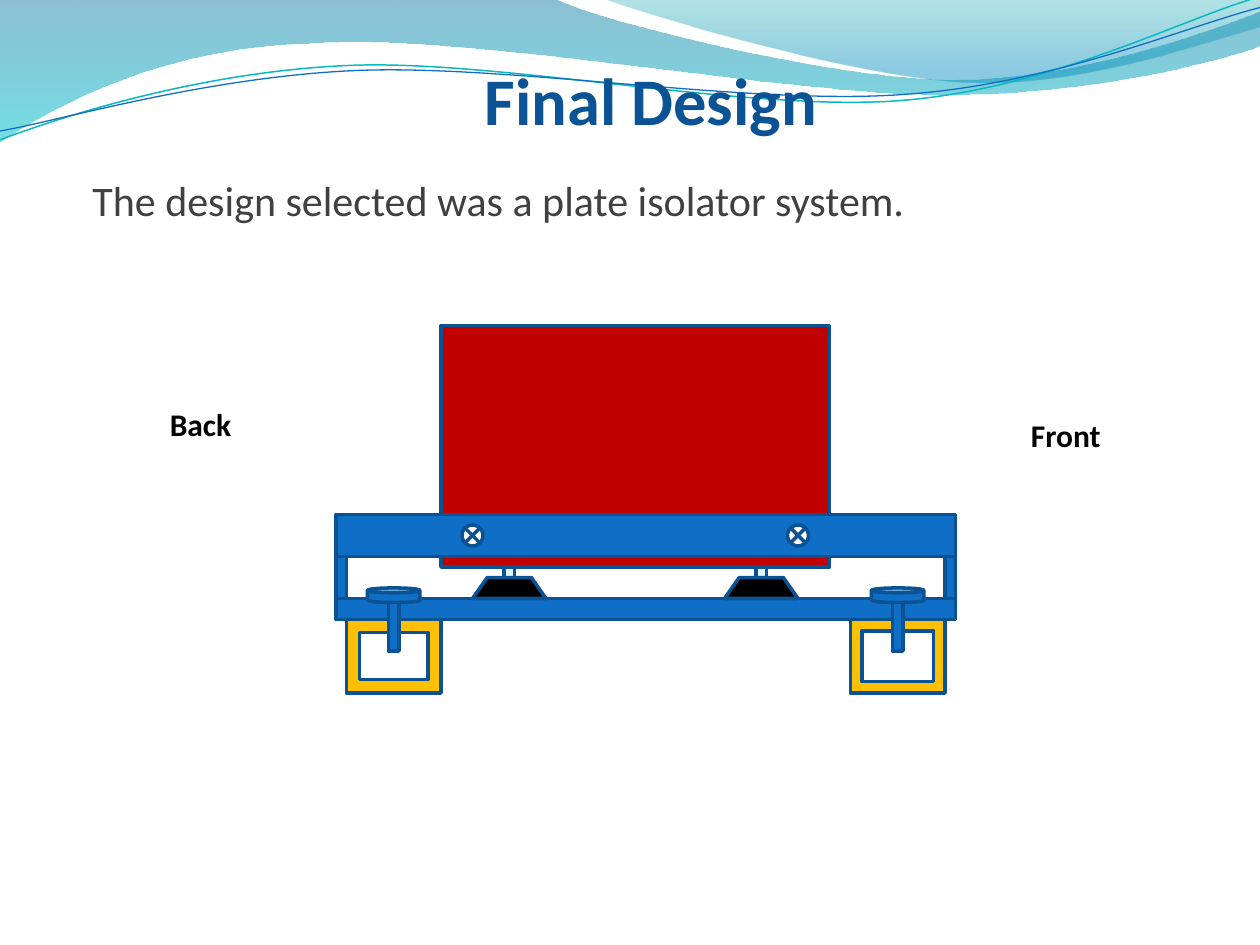
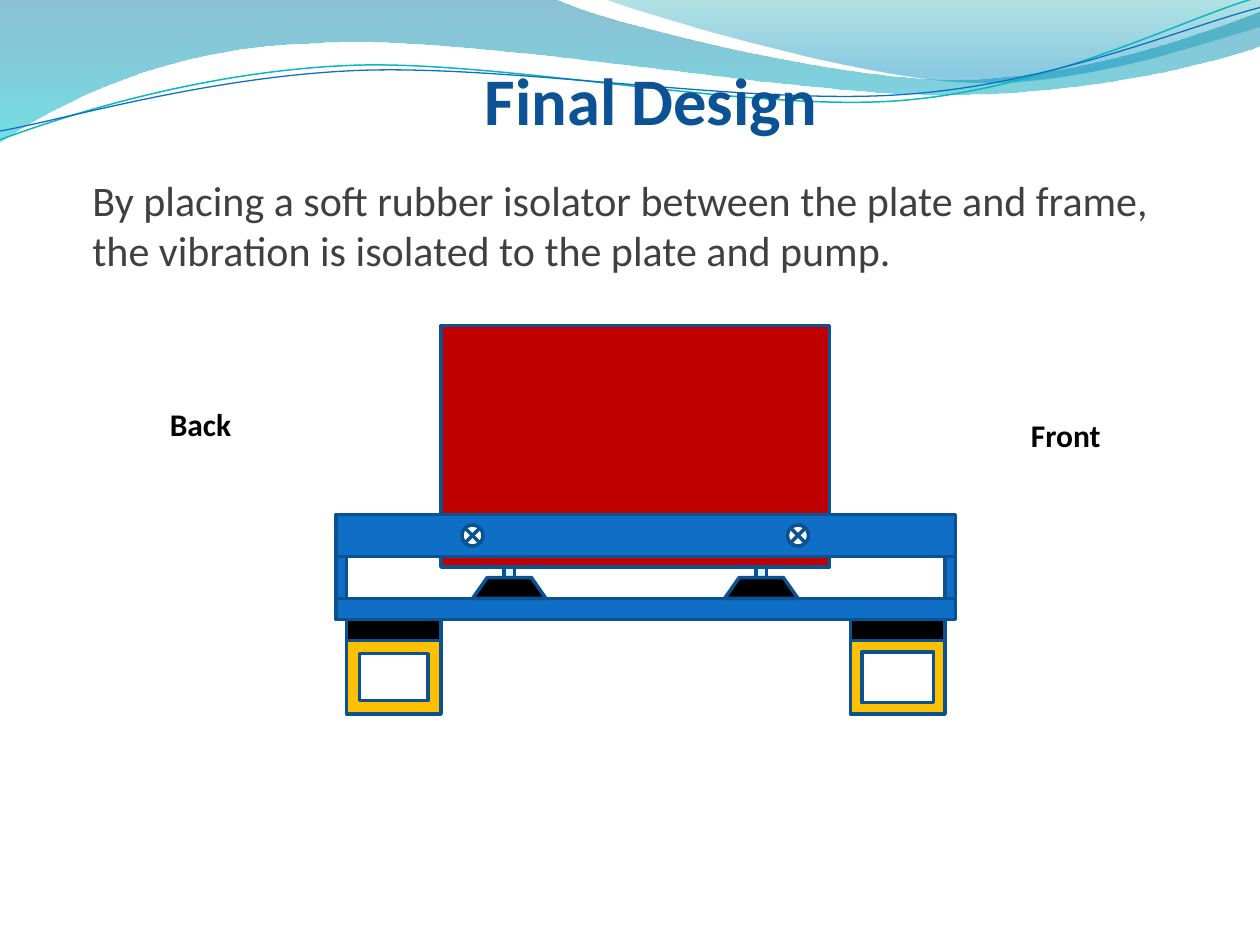
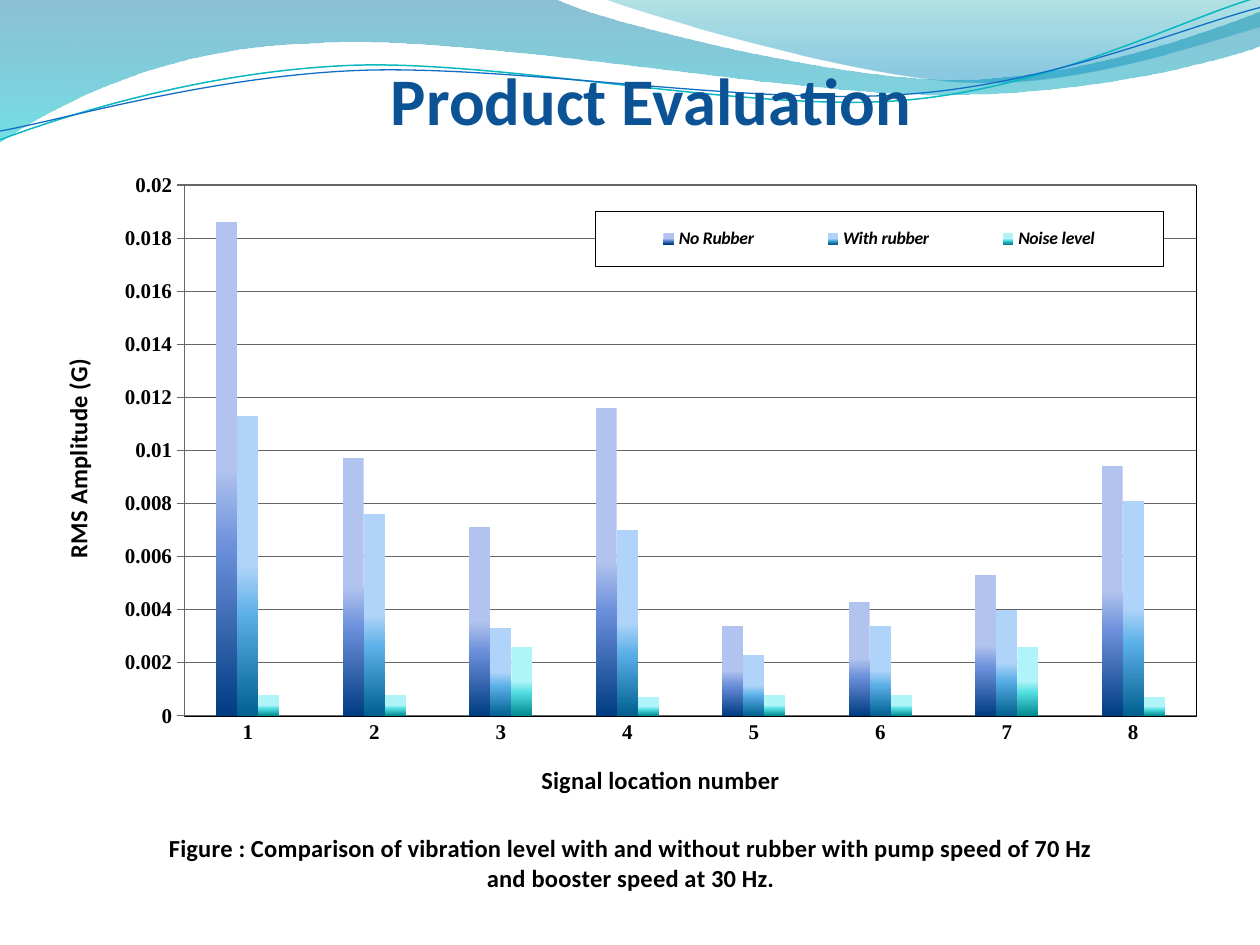
import pptx
import pptx.chart.data
import pptx.dml.color
import pptx.enum.chart
import pptx.enum.shapes
import pptx.enum.text
import pptx.oxml
import pptx.oxml.ns
import pptx.util

WIDE, HIGH = 10, 7.5
CELL = 1 / 12  # inches in one grid cell
FONT, TICK = "Calibri", "Times New Roman"
HUES = {
    "title": "0B5394", "body": "404040", "ink": "000000", "white": "FFFFFF",
    "edge": "0B5292", "steel": "0F6FC6", "stud": "DBF5F9", "pump": "C00000",
    "frame": "FFC000", "teal": "0AB8BF", "grid": "666666",
}
WAVES = [  # start, legs (one point is straight, three a curve), gradient stops
    ((0, 0), [
        [(4.4, -0.01)],
        [(4.76, 0.17), (6.64, 0.63), (7.58, 0.63)],
        [(8.53, 0.63), (9.58, 0.26), (10, 0.09)],
        [(10.01, 0.36)],
        [(9.83, 0.44), (8.7, 0.76), (7.46, 0.75)],
        [(6.22, 0.75), (3.82, 0.28), (2.57, 0.34)],
        [(1.29, 0.36), (0.46, 0.83), (-0.01, 1.13)],
    ], [(0, "0074A1", 45), (100, "00C6CF", 55)]),
    ((4.79, -0.01), [
        [(5.09, 0.11), (6.82, 0.62), (7.69, 0.65)],
        [(8.56, 0.69), (9.61, 0.32), (10, 0.21)],
        [(10, 0)],
    ], [(0, "00A1A9", 30), (80, "008BBF", 45)]),
]
LINES = [  # start, legs, colour, width
    ((0, 1.11), [
        [(0.48, 0.93), (1.58, 0.57), (2.77, 0.52)],
        [(3.95, 0.47), (5.93, 0.89), (7.13, 0.8)],
        [(8.33, 0.71), (9.38, 0.15), (9.98, -0.02)],
    ], "teal", 0.85),
    ((0, 1.04), [
        [(0.47, 0.96), (1.64, 0.61), (2.83, 0.56)],
        [(4.03, 0.51), (5.97, 0.84), (7.17, 0.75)],
        [(8.36, 0.67), (9.41, 0.21), (10, 0.06)],
    ], "steel", 0.75),
]
SERIES = [  # name, values, gradient from light to dark
    ("No Rubber", [0.0186, 0.0097, 0.0071, 0.0116, 0.0034, 0.0043, 0.0053, 0.0094],
     ["B1C3EE", "6B8FDA", "003C82"]),
    ("With rubber", [0.0113, 0.0076, 0.0033, 0.007, 0.0023, 0.0034, 0.004, 0.0081],
     ["B0D4F9", "5CB0E8", "006090"]),
    ("Noise level", [0.0008, 0.0008, 0.0026, 0.0007, 0.0008, 0.0008, 0.0026, 0.0007],
     ["AFF4F9", "54DEE2", "008A90"]),
]
KIND = pptx.enum.shapes.MSO_SHAPE
qn = pptx.oxml.ns.qn


def rgb(name):
    return pptx.dml.color.RGBColor.from_string(HUES[name])


def cells(*nums):
    return [pptx.util.Inches(n * CELL) for n in nums]


def style(font, size, hue="ink", bold=True, face=FONT, italic=False):
    font.size, font.bold, font.italic, font.name = pptx.util.Pt(size), bold, italic, face
    font.color.rgb = rgb(hue)


def text(slide, words, box, size, hue="ink", bold=True, align="LEFT", inset=0.1):
    """Write words in a box given in grid cells."""
    frame = slide.shapes.add_textbox(*cells(*box)).text_frame
    frame.word_wrap = True
    frame.margin_left = pptx.util.Inches(inset)
    para = frame.paragraphs[0]
    para.alignment = getattr(pptx.enum.text.PP_ALIGN, align)
    run = para.add_run()
    run.text = words
    style(run.font, size, hue, bold)


def blend(fill, root, stops):
    """Fill from top to bottom through (position, colour, alpha) stops."""
    fill.gradient()
    fill.gradient_angle = 270
    holder = next(root.iter(qn("a:gsLst")))
    for old in list(holder):
        holder.remove(old)
    for pos, hue, alpha in stops:
        holder.append(pptx.oxml.parse_xml(
            f'<a:gs {pptx.oxml.ns.nsdecls("a")} pos="{pos * 1000}"><a:srgbClr val="{hue}">'
            f'<a:alpha val="{alpha * 1000}"/></a:srgbClr></a:gs>'))


def curve(slide, start, legs, close):
    """Outline all points, then join each leg of three into one cubic curve."""
    def emu(point):
        return tuple(pptx.util.Inches(n) for n in point)

    pen = slide.shapes.build_freeform(*emu(start))
    pen.add_line_segments([emu(point) for leg in legs for point in leg], close=close)
    shape = pen.convert_to_shape()
    shape.shadow.inherit = False
    moves = iter(list(shape._element.iter(qn("a:lnTo"))))
    for leg in legs:
        group = [next(moves) for _ in leg]
        if len(leg) == 3:
            bend = pptx.oxml.parse_xml(f'<a:cubicBezTo {pptx.oxml.ns.nsdecls("a")}/>')
            group[0].addprevious(bend)
            for move in group:
                bend.append(move[0])
                move.getparent().remove(move)
    return shape


def banner(slide):
    for start, legs, stops in WAVES:
        wave = curve(slide, start, legs, True)
        blend(wave.fill, wave._element, stops)
        wave.line.fill.background()
    for start, legs, hue, width in LINES:
        line = curve(slide, start, legs, False)
        line.fill.background()
        line.line.color.rgb = rgb(hue)
        line.line.width = pptx.util.Pt(width)


def page(deck, title):
    slide = deck.slides.add_slide(deck.slide_layouts[6])
    banner(slide)
    text(slide, title, (12, 5, 100, 10), 38, "title", align="CENTER")
    return slide


def part(slide, kind, box, hue, turn=0, adjust=None):
    shape = slide.shapes.add_shape(kind, *cells(*box))
    shape.shadow.inherit = False
    shape.fill.solid()
    shape.fill.fore_color.rgb = rgb(hue)
    shape.line.color.rgb = rgb("edge")
    shape.line.width = pptx.util.Pt(2)
    shape.rotation = turn
    if adjust:
        shape.adjustments[0] = adjust


def rig(slide, left, top, rubber):
    """Draw the pump on its plate, on rubber pads or bolted to the frame."""
    def put(kind, x, y, wide, high, hue, **extra):
        part(slide, kind, (left + x, top + y, wide, high), hue, **extra)

    bar = KIND.FLOWCHART_PROCESS
    put(bar, 0, 26, 59, 2, "steel")
    for x in (37, 13):
        put(bar, x + 3, 19, 1, 5, "stud")
        put(KIND.FLOWCHART_MANUAL_OPERATION, x, 24, 7, 2, "ink", turn=180)
    put(bar, 10, 0, 37, 23, "pump")
    for x, rim in ((1, 0.18), (49, 0.154)):
        put(KIND.FRAME, x, 30 if rubber else 28, 9, 7, "frame", adjust=rim)
        if rubber:
            put(KIND.RECTANGLE, x, 28, 9, 2, "ink")
        else:
            put(KIND.CAN, x + 2, 25, 5, 1.4, "steel", adjust=0.333)
            put(bar, x + 4, 26.4, 1, 4.6, "steel")
    put(bar, 0, 18, 59, 4, "steel")
    for x in (58, 0):
        put(bar, x, 22, 1, 4, "steel")
    for x in (12, 43):
        put(KIND.FLOWCHART_SUMMING_JUNCTION, x, 19, 2, 2, "white")


def design(deck, words, rubber):
    slide = page(deck, "Final Design")
    text(slide, words, (7, 16, 105, 64), 24, "body", bold=False, inset=0.15)
    rig(slide, 32, 31, rubber)
    text(slide, "Back", (15, 38, 12, 4.8), 18)
    text(slide, "Front", (97, 39, 12, 4.8), 18)


def place(root, after=None, inner=False, **spots):
    """Set a manual layout, in percent of the chart."""
    for old in root.findall(qn("c:layout")):
        root.remove(old)
    target = '<c:layoutTarget val="inner"/>' if inner else ""
    modes = "".join(f'<c:{key}Mode val="edge"/>' for key in "xy")
    sizes = "".join(f'<c:{key} val="{val / 100:.4f}"/>' for key, val in spots.items())
    spot = 0 if after is None else root.index(root.find(qn(after))) + 1
    root.insert(spot, pptx.oxml.parse_xml(
        f'<c:layout {pptx.oxml.ns.nsdecls("c")}><c:manualLayout>{target}{modes}{sizes}'
        '</c:manualLayout></c:layout>'))


def border(fill):
    return pptx.oxml.parse_xml(
        f'<c:spPr {pptx.oxml.ns.nsdecls("c", "a")}>{fill}<a:ln w="3175"><a:solidFill>'
        f'<a:srgbClr val="{HUES["ink"]}"/></a:solidFill></a:ln></c:spPr>')


def label(title, words, x, y, turn=0):
    frame = title.text_frame
    run = frame.paragraphs[0].add_run()
    run.text = words
    style(run.font, 14)
    frame._txBody.bodyPr.set("rot", str(turn * 60000))
    place(title._element, "c:tx", x=x, y=y)


def axes(chart):
    mark = pptx.enum.chart.XL_TICK_MARK
    cat, val = chart.category_axis, chart.value_axis
    for axis, tick in ((cat, mark.NONE), (val, mark.CROSS)):
        style(axis.tick_labels.font, 12, face=TICK)
        axis.major_tick_mark, axis.minor_tick_mark = tick, mark.NONE
        axis.format.line.color.rgb = rgb("grid")
    val.minimum_scale, val.maximum_scale, val.major_unit = 0, 0.02, 0.002
    val.has_major_gridlines = True
    val.major_gridlines.format.line.color.rgb = rgb("grid")
    val.major_gridlines.format.line.width = pptx.util.Pt(0.75)
    label(cat.axis_title, "Signal location number", 42.6, 79.2)
    label(val.axis_title, "RMS Amplitude (G)", 2.1, 25, turn=-90)


def key(chart):
    chart.has_legend = True
    legend = chart.legend
    legend.position = pptx.enum.chart.XL_LEGEND_POSITION.RIGHT
    legend.include_in_layout = False
    style(legend.font, 10.1, italic=True)
    root = legend._element
    place(root, "c:legendPos", x=47.55, y=5.8, w=47.8, h=7.4)
    white = f'<a:solidFill><a:srgbClr val="{HUES["white"]}"/></a:solidFill>'
    root.find(qn("c:txPr")).addprevious(border(white))


def results(deck):
    slide = page(deck, "Product Evaluation")
    data = pptx.chart.data.CategoryChartData()
    data.categories = [str(n) for n in range(1, 9)]
    for name, vals, _ in SERIES:
        data.add_series(name, vals)
    chart = slide.shapes.add_chart(pptx.enum.chart.XL_CHART_TYPE.COLUMN_CLUSTERED,
                                   *cells(3, 16, 113, 71), data).chart
    style(chart.font, 10, bold=False, face="TeX Gyre Pagella")
    plot = chart.plots[0]
    plot.gap_width, plot.overlap, plot.vary_by_categories = 300, 0, False
    for bars, (_, _, (light, mid, dark)) in zip(plot.series, SERIES):
        blend(bars.format.fill, bars._element,
              [(0, light, 100), (50, light, 100), (66, mid, 100), (100, dark, 100)])
    axes(chart)
    key(chart)
    chart.has_title = True
    label(chart.chart_title, "Figure : Comparison of vibration level with and without rubber "
          "with pump speed of 70 Hz and booster speed at 30 Hz.", 11.2, 88.3)
    area = chart._chartSpace.chart.plotArea
    place(area, inner=True, x=12.9, y=2.3, w=85.3, h=71.2)
    area.append(border("<a:noFill/>"))


def main():
    deck = pptx.Presentation()
    deck.slide_width, deck.slide_height = pptx.util.Inches(WIDE), pptx.util.Inches(HIGH)
    design(deck, "The design selected was a plate isolator system.", rubber=False)
    design(deck, "By placing a soft rubber isolator between the plate and frame, "
           "the vibration is isolated to the plate and pump.", rubber=True)
    results(deck)
    deck.save("out.pptx")


if __name__ == "__main__":
    main()
